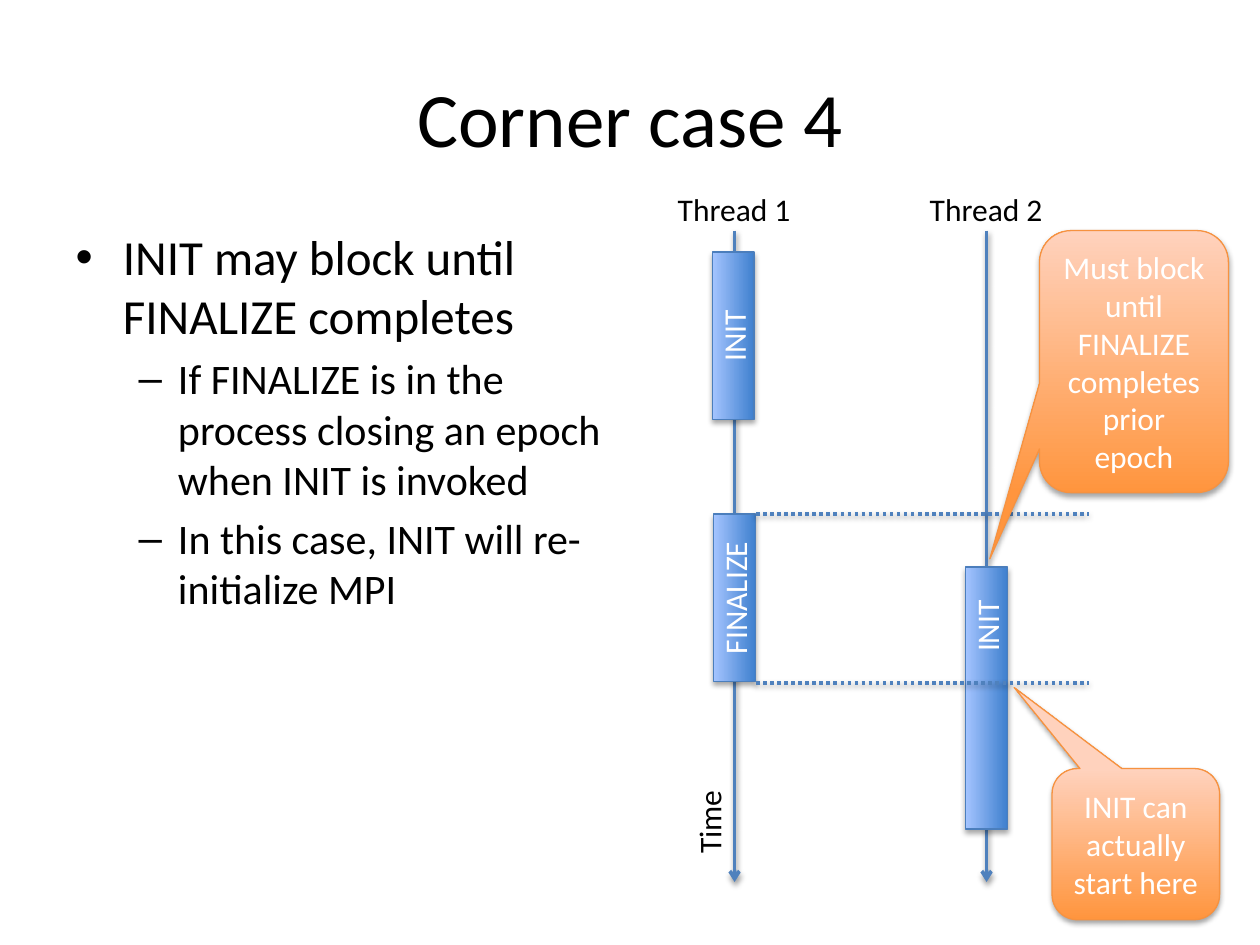
from lxml import etree
from pptx import Presentation
from pptx.dml.color import RGBColor
from pptx.enum.dml import MSO_LINE
from pptx.enum.shapes import MSO_CONNECTOR, MSO_SHAPE
from pptx.enum.text import MSO_ANCHOR, MSO_AUTO_SIZE, PP_ALIGN
from pptx.oxml.ns import qn
from pptx.util import Inches, Pt

BLACK = RGBColor(0x00, 0x00, 0x00)
WHITE = RGBColor(0xFF, 0xFF, 0xFF)
LINE_BLUE = RGBColor(0x4F, 0x81, 0xBD)
BAR_EDGE = RGBColor(0x4B, 0x7E, 0xBC)
BAR_DARK = RGBColor(0x3F, 0x80, 0xCE)
BAR_LIGHT = RGBColor(0xA4, 0xC4, 0xFF)
CALLOUT_EDGE = RGBColor(0xF6, 0x92, 0x40)
CALLOUT_DARK = RGBColor(0xFF, 0x95, 0x3E)
CALLOUT_LIGHT = RGBColor(0xFF, 0xD2, 0xBD)

FONT = "Calibri"
LEFT, CENTER = PP_ALIGN.LEFT, PP_ALIGN.CENTER
MIDDLE = MSO_ANCHOR.MIDDLE
DOTTED = MSO_LINE.ROUND_DOT
STRAIGHT = MSO_CONNECTOR.STRAIGHT
RECTANGLE = MSO_SHAPE.RECTANGLE
CALLOUT = MSO_SHAPE.ROUNDED_RECTANGULAR_CALLOUT


def write_text(para, text, size=18, color=BLACK, align=LEFT):
    para.alignment = align
    span = para.add_run()
    span.text = text
    span.font.name = FONT
    span.font.size = Pt(size)
    span.font.color.rgb = color


def cast_shadow(item, distance, opacity):
    """Add a soft downward shadow; call it after the line is formatted."""
    effects = etree.SubElement(item._element.spPr, qn("a:effectLst"))
    shadow = etree.SubElement(
        effects, qn("a:outerShdw"), blurRad=str(Pt(3.1)), dist=str(Pt(distance)),
        dir="5400000", rotWithShape="0")
    color = etree.SubElement(shadow, qn("a:srgbClr"), val=str(BLACK))
    etree.SubElement(color, qn("a:alpha"), val=str(opacity * 1000))


deck = Presentation()
deck.slide_width, deck.slide_height = Inches(10), Inches(7.5)
page = deck.slides.add_slide(deck.slide_layouts.get_by_name("Two Content"))
title, body, spare = list(page.placeholders)[:3]
for placeholder in list(page.placeholders)[2:]:
    placeholder._element.getparent().remove(placeholder._element)

# Title and list
title.left, title.top, title.width, title.height = map(Inches, (0.5, 0.3, 9, 1.25))
write_text(title.text_frame.paragraphs[0], "Corner case 4", size=44, align=CENTER)

body.left, body.top, body.width, body.height = map(Inches, (0.5, 1.75, 4.42, 4.95))
points = [
    (0, 28, "INIT may block until FINALIZE completes"),
    (1, 24, "If FINALIZE is in the process closing an epoch when INIT is invoked"),
    (1, 24, "In this case, INIT will re-initialize MPI"),
]
for index, (level, size, text) in enumerate(points):
    frame = body.text_frame
    para = frame.add_paragraph() if index else frame.paragraphs[0]
    para.level = level
    write_text(para, text, size=size)

# Thread time lines, then the dotted marks where FINALIZE starts and ends
THREAD_1, THREAD_2 = 5.83, 7.83
FINALIZE_START, FINALIZE_END = 4.08, 5.42
time_lines = [(x, 1.83, x, 7, False) for x in (THREAD_1, THREAD_2)]
marks = [(6, y, 8.64, y, True) for y in (FINALIZE_START, FINALIZE_END)]

# Bars run upwards: thread, top, length, label, left text margin
bars = [
    (THREAD_1 - 0.01, 2, 1.33, "INIT", 0.1),
    (THREAD_1, FINALIZE_START, 1.33, "FINALIZE", 0.1),
    (THREAD_2, 4.5, 2.08, "INIT", 1.24),
]
BAR_WIDTH = 0.33

callouts = [
    (8.25, 1.83, 1.5, 2.08, (-0.763, 0.753, 0.167),
     "Must block until FINALIZE completes prior epoch"),
    (8.35, 6.1, 1.33, 1.2, (-0.726, -1.036, 0.167), "INIT can actually start here"),
]

labels = [
    (5.28, 1.46, 1.11, 0, "Thread 1"),
    (7.28, 1.46, 1.11, 0, "Thread 2"),
    (5.27, 6.32, 0.71, 270, "Time"),
]

shapes = page.shapes
boxes = []
for group in (time_lines, marks):
    for x1, y1, x2, y2, dotted in group:
        line = shapes.add_connector(STRAIGHT, *map(Inches, (x1, y1, x2, y2)))
        line.line.color.rgb = LINE_BLUE
        line.line.width = Pt(2)
        if dotted:
            line.line.dash_style = DOTTED
        else:
            etree.SubElement(line.line._get_or_add_ln(), qn("a:tailEnd"), type="arrow")
        cast_shadow(line, 1.6, 38)
    if group is marks:
        break
    for left, top, width, turn, text in labels:
        label = shapes.add_textbox(*map(Inches, (left, top, width, 0.4)))
        label.rotation = turn
        label.text_frame.word_wrap = False
        label.text_frame.auto_size = MSO_AUTO_SIZE.SHAPE_TO_FIT_TEXT
        write_text(label.text_frame.paragraphs[0], text)
    for center, top, length, text, margin in bars:
        left = center - length / 2
        bar = shapes.add_shape(RECTANGLE, *map(Inches, (
            left, top + (length - BAR_WIDTH) / 2, length, BAR_WIDTH)))
        bar.rotation = 270
        bar.text_frame.margin_left = Inches(margin)
        boxes.append((bar, text, BAR_DARK, BAR_LIGHT, BAR_EDGE))

for left, top, width, height, adjustments, text in callouts:
    callout = shapes.add_shape(CALLOUT, *map(Inches, (left, top, width, height)))
    for index, value in enumerate(adjustments):
        callout.adjustments[index] = value
    boxes.append((callout, text, CALLOUT_DARK, CALLOUT_LIGHT, CALLOUT_EDGE))

for box, text, dark, light, edge in boxes:
    box.fill.gradient()
    box.fill.gradient_angle = 90
    for stop, color, position in zip(box.fill.gradient_stops, (dark, light), (0, 1)):
        stop.color.rgb = color
        stop.position = position
    box.line.color.rgb = edge
    box.line.width = Pt(0.75)
    cast_shadow(box, 1.8, 35)
    box.text_frame.word_wrap = True
    box.text_frame.vertical_anchor = MIDDLE
    write_text(box.text_frame.paragraphs[0], text, color=WHITE, align=CENTER)

deck.save("out.pptx")
